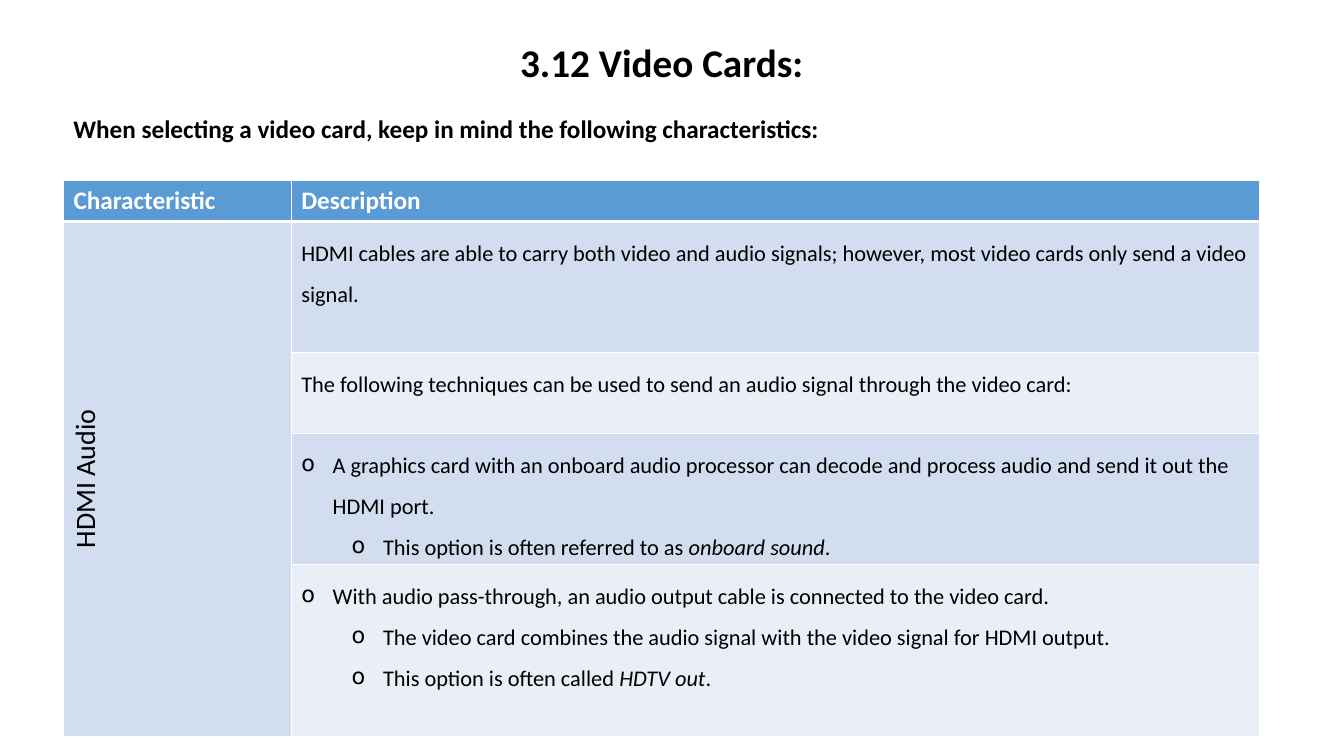
from lxml import etree
from pptx import Presentation
from pptx.dml.color import RGBColor
from pptx.enum import text as t
from pptx.oxml import ns
from pptx.util import Cm, Pt

FONT = "Calibri"
BLACK, WHITE = "000000", "FFFFFF"
HEADER_BLUE, BAND_DARK, BAND_LIGHT = "5B9BD5", "D2DEEF", "EAEFF7"
COLUMN_WIDTHS = (5.74, 24.41)
ROW_HEIGHTS = (1.03, 3.31, 2.03, 3.31, 4.32)

# Each paragraph is (bullet level or None, runs); each run is (wording, italic).
DESCRIPTIONS = [
    [(None, [("HDMI cables are able to carry both video and audio signals; "
              "however, most video cards only send a video signal.", False)])],
    [(None, [("The following techniques can be used to send an audio signal "
              "through the video card:", False)])],
    [(0, [("A graphics card with an onboard audio processor can decode and "
           "process audio and send it out the HDMI port.", False)]),
     (1, [("This option is often referred to as ", False),
          ("onboard sound", True), (".", False)])],
    [(0, [("With audio pass-through, an audio output cable is connected to "
           "the video card.", False)]),
     (1, [("The video card combines the audio signal with the video signal "
           "for HDMI output.", False)]),
     (1, [("This option is often called ", False),
          ("HDTV out", True), (".", False)])],
]


def color(hex_code):
    return RGBColor.from_string(hex_code)


def add_run(paragraph, wording, size, ink=BLACK, bold=False, italic=False):
    run = paragraph.add_run()
    run.text = wording
    font = run.font
    font.name, font.size, font.bold, font.italic = FONT, Pt(size), bold, italic
    font.color.rgb = color(ink)


def add_bullet(paragraph, level):
    paragraph.level = level
    props = paragraph._p.get_or_add_pPr()
    props.set("marL", str(Cm(0.79 + 1.27 * level)))
    props.set("indent", str(Cm(-0.79)))
    etree.SubElement(props, ns.qn("a:buChar"), char="o")


def style_cell(cell, fill, bottom=1):
    """Give the cell white borders, with a bottom width in points, and a fill."""
    props = cell._tc.get_or_add_tcPr()
    for side, width in (("L", 1), ("R", 1), ("T", 1), ("B", bottom)):
        line = etree.SubElement(props, ns.qn(f"a:ln{side}"), w=str(Pt(width)))
        solid = etree.SubElement(line, ns.qn("a:solidFill"))
        etree.SubElement(solid, ns.qn("a:srgbClr"), val=WHITE)
    cell.fill.solid()
    cell.fill.fore_color.rgb = color(fill)


def place_title(slide, left, top, width, height):
    title = slide.shapes.title
    title.left, title.top, title.width, title.height = map(
        Cm, (left, top, width, height))
    frame = title.text_frame
    frame.word_wrap = False
    frame.auto_size = t.MSO_AUTO_SIZE.SHAPE_TO_FIT_TEXT
    frame.vertical_anchor = t.MSO_ANCHOR.TOP
    heading = frame.paragraphs[0]
    heading.alignment = t.PP_ALIGN.CENTER
    heading.line_spacing = 1.0
    add_run(heading, "3.12 Video Cards:", 28, bold=True)


def add_introduction(slide, left, top, width, height):
    frame = slide.shapes.add_textbox(
        *map(Cm, (left, top, width, height))).text_frame
    frame.word_wrap = True
    frame.auto_size = t.MSO_AUTO_SIZE.SHAPE_TO_FIT_TEXT
    add_run(frame.paragraphs[0], "When selecting a video card, keep in mind "
            "the following characteristics:", 18, bold=True)


def fill_description(cell, content):
    frame = cell.text_frame
    for index, (level, runs) in enumerate(content):
        paragraph = frame.add_paragraph() if index else frame.paragraphs[0]
        if level is not None:
            add_bullet(paragraph, level)
        paragraph.line_spacing = 1.5
        for wording, italic in runs:
            add_run(paragraph, wording, 16, italic=italic)


def add_characteristics(slide, left, top):
    table = slide.shapes.add_table(
        len(ROW_HEIGHTS), len(COLUMN_WIDTHS), Cm(left), Cm(top),
        Cm(sum(COLUMN_WIDTHS)), Cm(sum(ROW_HEIGHTS))).table
    for column, width in zip(table.columns, COLUMN_WIDTHS):
        column.width = Cm(width)
    for row, height in zip(table.rows, ROW_HEIGHTS):
        row.height = Cm(height)

    for index, label in enumerate(("Characteristic", "Description")):
        header = table.cell(0, index)
        style_cell(header, HEADER_BLUE, bottom=3)
        add_run(header.text_frame.paragraphs[0], label, 18, WHITE, bold=True)

    for row, content in enumerate(DESCRIPTIONS, start=1):
        description = table.cell(row, 1)
        style_cell(description, BAND_DARK if row % 2 else BAND_LIGHT)
        fill_description(description, content)
        style_cell(table.cell(row, 0), BAND_DARK)

    characteristic = table.cell(1, 0)
    characteristic.merge(table.cell(len(DESCRIPTIONS), 0))
    characteristic.vertical_anchor = t.MSO_ANCHOR.MIDDLE
    characteristic._tc.get_or_add_tcPr().set("vert", "vert270")
    name = characteristic.text_frame.paragraphs[0]
    name.alignment = t.PP_ALIGN.CENTER
    add_run(name, "HDMI Audio", 20)


def main():
    deck = Presentation()
    deck.slide_width, deck.slide_height = Cm(33.87), Cm(19.05)
    slide = deck.slides.add_slide(deck.slide_layouts[5])
    place_title(slide, 12.8, 0.84, 7.75, 1.45)
    add_introduction(slide, 1.6, 2.74, 31.6, 1.02)
    add_characteristics(slide, 1.6, 4.55)
    deck.save("out.pptx")


if __name__ == "__main__":
    main()
